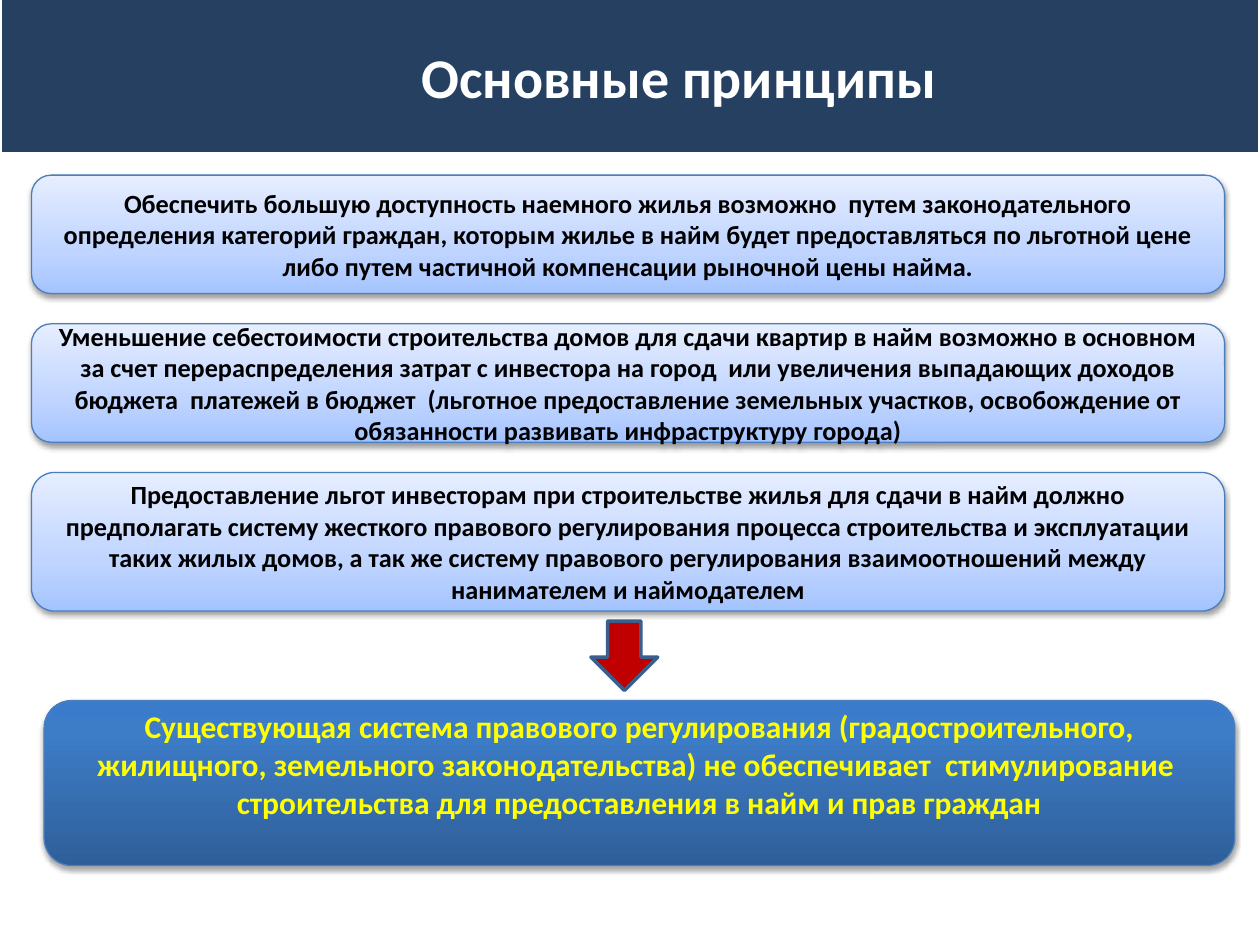
from lxml.etree import SubElement
from pptx import Presentation
from pptx.dml.color import RGBColor
from pptx.enum.shapes import MSO_SHAPE
from pptx.enum.text import MSO_ANCHOR, PP_ALIGN
from pptx.oxml.ns import qn
from pptx.util import Inches, Pt

TITLE = "Основные принципы"
PRINCIPLES = [
    ("Обеспечить большую доступность наемного жилья возможно  путем законодательного "
     "определения категорий граждан, которым жилье в найм будет предоставляться по льготной "
     "цене либо путем частичной компенсации рыночной цены найма.", 0.94),
    ("Уменьшение себестоимости строительства домов для сдачи квартир в найм возможно в основном "
     "за счет перераспределения затрат с инвестора на город  или увеличения выпадающих доходов "
     "бюджета  платежей в бюджет  (льготное предоставление земельных участков, освобождение от "
     "обязанности развивать инфраструктуру города)", 0.94),
    ("Предоставление льгот инвесторам при строительстве жилья для сдачи в найм должно "
     "предполагать систему жесткого правового регулирования процесса строительства и "
     "эксплуатации таких жилых домов, а так же систему правового регулирования "
     "взаимоотношений между нанимателем и наймодателем", 1.1),
]
CONCLUSION = ("Существующая система правового регулирования (градостроительного, жилищного, "
              "земельного законодательства) не обеспечивает  стимулирование  строительства "
              "для предоставления в найм и прав граждан")

LIGHT = [(0, "A4C4FF"), (35, "BFD4FF"), (100, "E6EEFF")]
DEEP = [(0, "2F5F99"), (80, "3D7CC7"), (100, "3A7CCB")]
WIDTH, HEIGHT = 10, 7.5
LEFT, TOP, BOX_W, GAP = 0.25, 1.39, 9.47, 0.24


def rgb(color):
    return RGBColor.from_string(color)


def write(sp, text, size, color):
    tf = sp.text_frame
    tf.word_wrap = True
    p = tf.paragraphs[0]
    p.alignment = PP_ALIGN.CENTER
    r = p.add_run()
    r.text = text
    r.font.name, r.font.size, r.font.bold = "Calibri", Pt(size), True
    r.font.color.rgb = rgb(color)
    return tf


def add_shape(slide, kind, box, line, line_w, fill=None):
    sp = slide.shapes.add_shape(kind, *map(Inches, box))
    sp.shadow.inherit = False
    sp.line.color.rgb = rgb(line)
    sp.line.width = Pt(line_w)
    if fill:
        sp.fill.solid()
        sp.fill.fore_color.rgb = rgb(fill)
    return sp


def add_gradient(sp, stops):
    sp.fill.gradient()
    sp.fill.gradient_angle = 90
    stop_list = next(sp._element.spPr.iter(qn("a:gsLst")))
    for old in list(stop_list):
        stop_list.remove(old)
    for pos, color in stops:
        gs = SubElement(stop_list, qn("a:gs"), pos=str(pos * 1000))
        SubElement(gs, qn("a:srgbClr"), val=color)


def add_shadow(sp, alpha, blur, dist):
    effects = sp._element.spPr.find(qn("a:effectLst"))
    shadow = SubElement(effects, qn("a:outerShdw"), blurRad=str(Pt(blur)), dist=str(Pt(dist)),
                        dir="5400000", rotWithShape="0")
    color = SubElement(shadow, qn("a:srgbClr"), val="000000")
    SubElement(color, qn("a:alpha"), val=str(alpha * 1000))


def add_panel(slide, box, text, size, color, stops, alpha, dist):
    sp = add_shape(slide, MSO_SHAPE.ROUNDED_RECTANGLE, box, "4B7EBC", 0.75)
    add_gradient(sp, stops)
    add_shadow(sp, alpha, 3.1, dist)
    tf = write(sp, text, size, color)
    tf.vertical_anchor = MSO_ANCHOR.MIDDLE
    return tf


def main():
    prs = Presentation()
    prs.slide_width, prs.slide_height = Inches(WIDTH), Inches(HEIGHT)
    slide = prs.slides.add_slide(prs.slide_layouts[6])

    add_shape(slide, MSO_SHAPE.RECTANGLE, (0, -0.03, WIDTH, 1.25), "FFFFFF", 2, "254061")
    title = slide.shapes.add_textbox(*map(Inches, (1.06, 0.29, 8.66, 0.64)))
    write(title, TITLE, 32, "FFFFFF")

    top = TOP
    for text, height in PRINCIPLES:
        add_panel(slide, (LEFT, top, BOX_W, height), text, 15, "000000", LIGHT, 38, 1.6)
        top += height + GAP

    tf = add_panel(slide, (0.35, 5.56, 9.45, 1.31), CONCLUSION, 18, "FFFF00", DEEP, 35, 1.8)
    tf.margin_bottom = Inches(0.35)
    add_shape(slide, MSO_SHAPE.DOWN_ARROW, (4.69, 4.93, 0.53, 0.55), "3A5F8C", 2, "C00000")

    prs.save("out.pptx")


if __name__ == "__main__":
    main()
